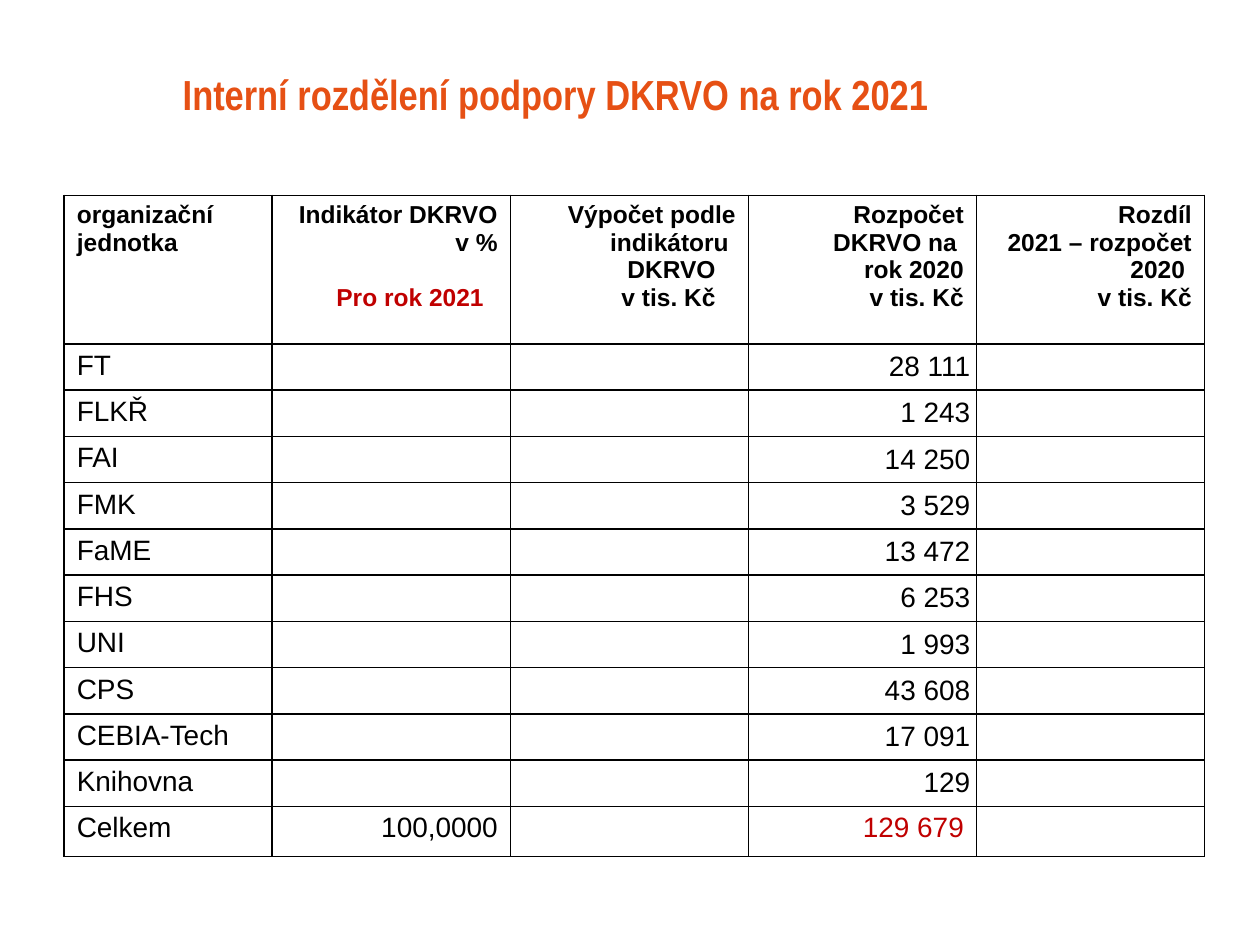
"""Build the slide on the internal distribution of DKRVO support."""
from dataclasses import dataclass

from lxml.etree import SubElement
from pptx import Presentation
from pptx.dml.color import RGBColor
from pptx.enum.text import MSO_ANCHOR, PP_ALIGN
from pptx.oxml.ns import qn
from pptx.table import _Cell
from pptx.text.text import _Paragraph
from pptx.util import Inches, Pt

ORANGE = RGBColor(0xE6, 0x50, 0x14)
BLACK = RGBColor(0, 0, 0)
RED = RGBColor(0xC0, 0, 0)

COLUMN_WIDTHS = (1.65, 1.89, 1.89, 1.81, 1.81)
HEADER_HEIGHT, TOTAL_HEIGHT, TABLE_HEIGHT = 1.18, 0.4, 5.25


@dataclass(frozen=True)
class Line:
    text: str
    color: RGBColor = BLACK
    before: float = 0
    right_indent: float = 0


@dataclass(frozen=True)
class Unit:
    name: str
    budget: str


HEADERS = (
    (Line("organizační jednotka"),),
    (Line("Indikátor DKRVO"), Line("v %"),
     Line("Pro rok 2021", RED, before=16, right_indent=0.11)),
    (Line("Výpočet podle indikátoru "), Line("DKRVO", right_indent=0.16),
     Line("v tis. Kč")),
    (Line("Rozpočet DKRVO na "), Line("rok 2020"), Line("v tis. Kč")),
    (Line("Rozdíl"), Line("2021 – rozpočet 2020 "), Line("v tis. Kč")),
)
UNITS = (
    Unit("FT", "28 111"), Unit("FLKŘ", "1 243"), Unit("FAI", "14 250"),
    Unit("FMK", "3 529"), Unit("FaME", "13 472"), Unit("FHS", "6 253"),
    Unit("UNI", "1 993"), Unit("CPS", "43 608"), Unit("CEBIA-Tech", "17 091"),
    Unit("Knihovna", "129"),
)


def write(paragraph: _Paragraph, text: str, *, size: float = 16,
          color: RGBColor = BLACK, bold: bool = False, font: str = "Arial",
          align: PP_ALIGN = PP_ALIGN.LEFT) -> None:
    """Add formatted text to a paragraph."""
    paragraph.alignment = align
    run = paragraph.add_run()
    run.text = text
    run.font.size = Pt(size)
    run.font.bold = bold
    run.font.name = font
    run.font.color.rgb = color


def set_insets(cell: _Cell, side: float, end: float) -> None:
    """Set the horizontal and vertical insets of a cell."""
    cell.margin_left = cell.margin_right = Inches(side)
    cell.margin_top = cell.margin_bottom = Inches(end)


def prepare_cell(cell: _Cell) -> None:
    """Give a cell thin black borders and no fill."""
    properties = cell._tc.get_or_add_tcPr()
    for side in ("a:lnL", "a:lnR", "a:lnT", "a:lnB"):
        border = SubElement(properties, qn(side), w=str(Pt(1)))
        fill = SubElement(border, qn("a:solidFill"))
        SubElement(fill, qn("a:srgbClr"), val=str(BLACK))
    cell.fill.background()
    set_insets(cell, 0.05, 0)


def fill_cell(cell: _Cell, lines: tuple[Line, ...], *, size: float = 16,
              bold: bool = False, align: PP_ALIGN = PP_ALIGN.LEFT) -> None:
    """Write lines into a cell, one paragraph each."""
    set_insets(cell, 0.1, 0.05)
    frame = cell.text_frame
    for index, line in enumerate(lines):
        paragraph = frame.add_paragraph() if index else frame.paragraphs[0]
        if line.before:
            paragraph.space_before = Pt(line.before)
        if line.right_indent:
            paragraph._p.get_or_add_pPr().set("marR", str(Inches(line.right_indent)))
        write(paragraph, line.text, size=size, color=line.color, bold=bold, align=align)


def main() -> None:
    """Create the presentation and save it."""
    presentation = Presentation()
    presentation.slide_width, presentation.slide_height = Inches(10), Inches(7.5)
    slide = presentation.slides.add_slide(presentation.slide_layouts[5])

    title = slide.shapes.title
    title.left, title.top = Inches(1.15), Inches(0.36)
    title.width, title.height = Inches(8.63), Inches(0.76)
    title.text_frame.vertical_anchor = MSO_ANCHOR.MIDDLE
    heading = title.text_frame.paragraphs[0]
    heading._p.get_or_add_pPr().set("marL", str(Inches(0.2)))
    write(heading, "Interní rozdělení podpory DKRVO na rok 2021", size=24,
          color=ORANGE, bold=True, font="Arial Narrow")

    budget_table = slide.shapes.add_table(
        len(UNITS) + 2, len(COLUMN_WIDTHS), Inches(0.51), Inches(1.55),
        Inches(sum(COLUMN_WIDTHS)), Inches(TABLE_HEIGHT)).table
    budget_table.first_row = budget_table.horz_banding = False
    for column, width in zip(budget_table.columns, COLUMN_WIDTHS):
        column.width = Inches(width)
    unit_height = (TABLE_HEIGHT - HEADER_HEIGHT - TOTAL_HEIGHT) / len(UNITS)
    heights = (HEADER_HEIGHT, *[unit_height] * len(UNITS), TOTAL_HEIGHT)
    for row, height in zip(budget_table.rows, heights):
        row.height = Inches(height)
    for cell in budget_table.iter_cells():
        prepare_cell(cell)

    for column, lines in enumerate(HEADERS):
        fill_cell(budget_table.cell(0, column), lines, size=14, bold=True,
                  align=PP_ALIGN.RIGHT if column else PP_ALIGN.LEFT)
    for row, unit in enumerate(UNITS, start=1):
        fill_cell(budget_table.cell(row, 0), (Line(unit.name),))
        budget = budget_table.cell(row, 3)
        fill_cell(budget, (Line(unit.budget),), align=PP_ALIGN.RIGHT)
        set_insets(budget, 0.05, 0)
        budget.vertical_anchor = MSO_ANCHOR.MIDDLE

    total = len(UNITS) + 1
    fill_cell(budget_table.cell(total, 0), (Line("Celkem"),))
    fill_cell(budget_table.cell(total, 1), (Line("100,0000"),), align=PP_ALIGN.RIGHT)
    fill_cell(budget_table.cell(total, 3), (Line("129 679", RED),), align=PP_ALIGN.RIGHT)

    presentation.save("out.pptx")


if __name__ == "__main__":
    main()
